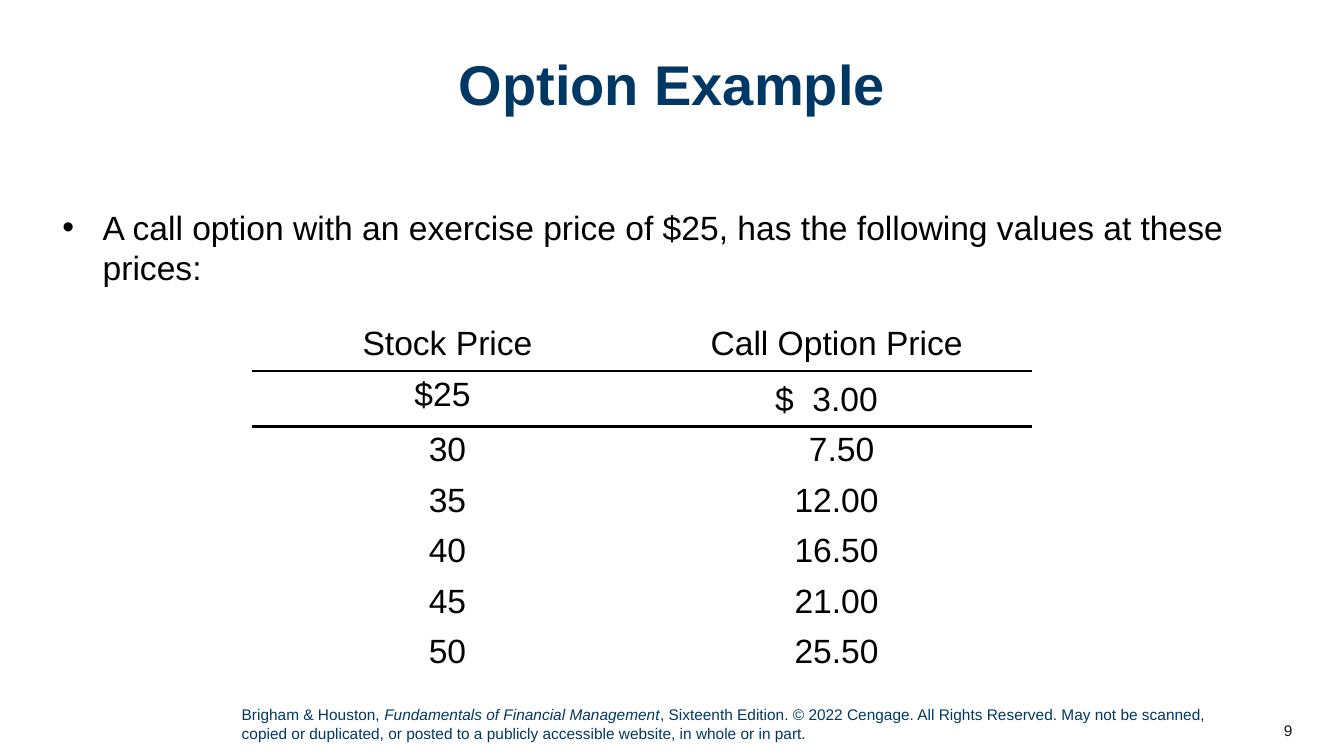
from lxml import etree
from pptx import Presentation
from pptx.dml.color import RGBColor
from pptx.enum import text
from pptx.oxml.ns import qn
from pptx.util import Pt

NAVY = RGBColor(0x00, 0x38, 0x65)
BLACK = RGBColor(0, 0, 0)
CHARCOAL = RGBColor(0x18, 0x17, 0x17)
WHITE = RGBColor(0xFF, 0xFF, 0xFF)

TITLE_ONLY = 5
MARGIN, CONTENT_WIDTH = 37.44, 884.88
ROW_HEIGHT, FIRST_PRICE_HEIGHT = 34, 37.5

PRICES = [
    ("Stock Price", "Call Option Price"),
    ("$25", "$  3.00"),
    ("30", "7.50"),
    ("35", "12.00"),
    ("40", "16.50"),
    ("45", "21.00"),
    ("50", "25.50"),
]
# Cell insets (left, top, right, bottom) that line up the figures
USUAL_INSETS = (7.2, 3.6, 7.2, 3.6)
INSETS = {
    (1, 0): (0, 3.6, 7.2, 3.6),
    (1, 1): (0, 7.2, 14.4, 3.6),
    (2, 1): (7.2, 3.6, 0, 3.6),
}


def add_span(para, words, size, color, bold=False, italic=False):
    span = para.add_run()
    span.text = words
    font = span.font
    font.name, font.size = "Arial", Pt(size)
    font.bold, font.italic = bold, italic
    font.color.rgb = color


def add_box(page, left, top, width, height, anchor=text.MSO_ANCHOR.TOP):
    """Add a wrapping text box and return its first paragraph."""
    box = page.shapes.add_textbox(Pt(left), Pt(top), Pt(width), Pt(height))
    box.text_frame.word_wrap = True
    box.text_frame.vertical_anchor = anchor
    return box.text_frame.paragraphs[0]


def add_bullet(para, indent):
    properties = para._p.get_or_add_pPr()
    properties.set("marL", str(Pt(indent)))
    properties.set("indent", str(-Pt(indent)))
    etree.SubElement(properties, qn("a:buFont"), typeface="Arial")
    etree.SubElement(properties, qn("a:buChar"), char="•")


def add_border(cell, side, width, color):
    line = etree.Element(qn(f"a:{side}"), w=str(Pt(width)))
    fill = etree.SubElement(line, qn("a:solidFill"))
    etree.SubElement(fill, qn("a:srgbClr"), val=str(color))
    cell._tc.get_or_add_tcPr().insert(0, line)


def set_title(page, words):
    title = page.shapes.title
    title.left, title.top = Pt(MARGIN), Pt(37.44)
    title.width, title.height = Pt(CONTENT_WIDTH), Pt(95.76)
    frame = title.text_frame
    frame.auto_size = text.MSO_AUTO_SIZE.NONE
    frame.vertical_anchor = text.MSO_ANCHOR.TOP
    para = frame.paragraphs[0]
    para.alignment = text.PP_ALIGN.CENTER
    para.line_spacing = 0.9
    add_span(para, words, 40, NAVY, bold=True)


def fill_cell(cell, words, insets):
    cell.fill.solid()
    cell.fill.fore_color.rgb = WHITE
    (cell.margin_left, cell.margin_top,
     cell.margin_right, cell.margin_bottom) = map(Pt, insets)
    para = cell.text_frame.paragraphs[0]
    para.alignment = text.PP_ALIGN.CENTER
    add_span(para, words, 24, BLACK)


def add_price_table(page, left, top, width):
    height = ROW_HEIGHT * (len(PRICES) - 1) + FIRST_PRICE_HEIGHT
    table = page.shapes.add_table(
        len(PRICES), 2, Pt(left), Pt(top), Pt(width), Pt(height)).table
    table.first_row = table.horz_banding = False
    for row, values in enumerate(PRICES):
        table.rows[row].height = Pt(FIRST_PRICE_HEIGHT if row == 1 else ROW_HEIGHT)
        for column, words in enumerate(values):
            cell = table.cell(row, column)
            fill_cell(cell, words, INSETS.get((row, column), USUAL_INSETS))
            # Rule between the headings and the prices
            if row < 2:
                add_border(cell, ("lnB", "lnT")[row], 2.25, BLACK)


def add_footer(page):
    para = add_box(page, 165.6, 500.4, 705.6, 33.84)
    add_span(para, "Brigham & Houston, ", 11, NAVY)
    add_span(para, "Fundamentals of Financial Management", 11, NAVY, italic=True)
    add_span(para, ", Sixteenth Edition. © 2022 Cengage. All Rights Reserved. "
             "May not be scanned, copied or duplicated, or posted to a publicly "
             "accessible website, in whole or in part.", 11, NAVY)

    # Page number
    number = add_box(page, 872.64, 507.6, 57.6, 28.8, text.MSO_ANCHOR.MIDDLE)
    number.alignment = text.PP_ALIGN.RIGHT
    add_span(number, "9", 11, CHARCOAL)


def main():
    deck = Presentation()
    deck.slide_width, deck.slide_height = Pt(960), Pt(540)
    page = deck.slides.add_slide(deck.slide_layouts[TITLE_ONLY])

    set_title(page, "Option Example")

    # Introduction
    intro = add_box(page, MARGIN, 144, CONTENT_WIDTH, 69.12)
    add_bullet(intro, 28.8)
    add_span(intro, "A call option with an exercise price of $25, has the "
             "following values at these prices:", 24, BLACK)

    add_price_table(page, 180.72, 228.96, 555.84)
    add_footer(page)
    deck.save("out.pptx")


if __name__ == "__main__":
    main()
